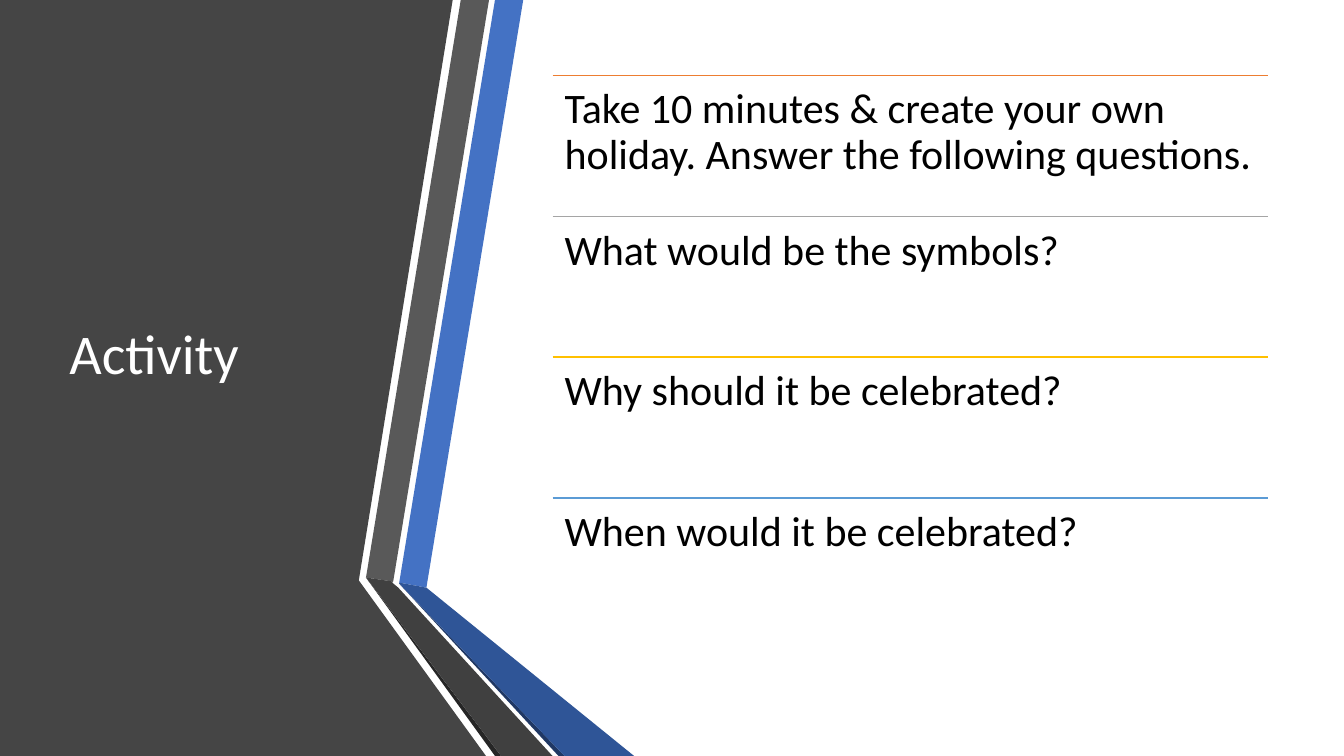
from dataclasses import dataclass

from lxml.etree import SubElement
from pptx import Presentation
from pptx.dml.color import RGBColor
from pptx.enum.text import MSO_ANCHOR, PP_ALIGN
from pptx.oxml.ns import qn
from pptx.slide import Slide
from pptx.util import Pt

PX = 9144  # EMU per px, 100 px to the inch


@dataclass(frozen=True)
class Theme:
    font: str = "Calibri"
    title_size: int = 40
    question_size: int = 30
    rule_width: int = 1
    title: str = "FFFFFF"
    question: str = "000000"
    panel: str = "454545"
    blue: str = "4472C4"
    blue_fold: str = "2F5597"
    blue_edge: str = "203864"
    gray: str = "595959"
    gray_fold: str = "404040"
    gray_edge: str = "262626"
    orange_rule: str = "ED7D31"
    gray_rule: str = "A5A5A5"
    gold_rule: str = "FFC000"
    sky_rule: str = "5B9BD5"


THEME = Theme()


@dataclass(frozen=True)
class Facet:
    color: str
    corners: tuple[tuple[int, int], ...]


@dataclass(frozen=True)
class Question:
    wording: str
    rule_color: str


@dataclass(frozen=True)
class Box:
    left: int
    top: int
    width: int
    height: int


# Dark panel and the folded ribbons beside it
FACETS = (
    Facet(THEME.panel, ((0, 0), (449, 0), (356, 575), (356, 576), (482, 750), (0, 750))),
    Facet(THEME.blue, ((396, 578), (423, 583), (519, 0), (491, 0))),
    Facet(THEME.gray, ((485, 0), (457, 0), (363, 573), (390, 577))),
    Facet(THEME.gray_edge, ((363, 573), (491, 750), (497, 750))),
    Facet(THEME.blue_edge, ((396, 579), (554, 750), (560, 750))),
    Facet(THEME.blue_fold, ((396, 579), (560, 750), (629, 750), (423, 583), (396, 578))),
    Facet(THEME.gray_fold, ((548, 750), (395, 583), (389, 578), (390, 577), (363, 573), (497, 750))),
)

QUESTIONS = (
    Question("Take 10 minutes & create your own holiday. Answer the following questions.",
             THEME.orange_rule),
    Question("What would be the symbols?", THEME.gray_rule),
    Question("Why should it be celebrated?", THEME.gold_rule),
    Question("When would it be celebrated?", THEME.sky_rule),
)

TITLE_BOX = Box(59, 75, 304, 558)
QUESTION_AREA = Box(548, 75, 710, 559)
TITLE_FRAME = {"word_wrap": True, "vertical_anchor": MSO_ANCHOR.MIDDLE}
QUESTION_FRAME = {
    "word_wrap": True, "vertical_anchor": MSO_ANCHOR.TOP,
    "margin_left": 12 * PX, "margin_right": 12 * PX,
    "margin_top": 12 * PX, "margin_bottom": 12 * PX,
}
PARAGRAPH = {"alignment": PP_ALIGN.LEFT, "line_spacing": 0.9}


def apply_format(target: object, values: dict[str, object]) -> None:
    for name, value in values.items():
        setattr(target, name, value)


def draw_facet(slide: Slide, facet: Facet) -> None:
    start, *others = facet.corners
    outline = slide.shapes.build_freeform(*start, scale=PX)
    outline.add_line_segments(others, close=True)
    surface = outline.convert_to_shape()
    surface.shadow.inherit = False
    surface.fill.solid()
    surface.fill.fore_color.rgb = RGBColor.from_string(facet.color)
    surface.line.fill.background()


def draw_wording(slide: Slide, box: Box, wording: str, size: int, color: str,
                 frame_format: dict[str, object]) -> None:
    frame = slide.shapes.add_textbox(
        box.left * PX, box.top * PX, box.width * PX, box.height * PX).text_frame
    apply_format(frame, frame_format)
    paragraph = frame.paragraphs[0]
    apply_format(paragraph, PARAGRAPH)
    run = paragraph.add_run()
    run.text = wording
    apply_format(run.font, {"name": THEME.font, "size": Pt(size)})
    run.font.color.rgb = RGBColor.from_string(color)


def draw_rule(slide: Slide, box: Box, color: str) -> None:
    rule = slide.shapes.add_connector(
        1, box.left * PX, box.top * PX, (box.left + box.width) * PX, box.top * PX)
    rule.line.color.rgb = RGBColor.from_string(color)
    rule.line.width = Pt(THEME.rule_width)
    SubElement(rule._element.spPr, qn("a:effectLst"))


def draw_question(slide: Slide, index: int, question: Question) -> None:
    area = QUESTION_AREA
    pitch = area.height / len(QUESTIONS)
    row = Box(area.left, round(area.top + index * pitch), area.width, round(pitch))
    draw_rule(slide, row, question.rule_color)
    draw_wording(slide, row, question.wording, THEME.question_size, THEME.question,
                 QUESTION_FRAME)


def main() -> None:
    deck = Presentation()
    apply_format(deck, {"slide_width": 1333 * PX, "slide_height": 750 * PX})
    slide = deck.slides.add_slide(deck.slide_layouts[6])

    # Panel and ribbons
    for facet in FACETS:
        draw_facet(slide, facet)

    # Title
    draw_wording(slide, TITLE_BOX, "Activity", THEME.title_size, THEME.title, TITLE_FRAME)

    # Questions
    for index, question in enumerate(QUESTIONS):
        draw_question(slide, index, question)

    deck.save("out.pptx")


if __name__ == "__main__":
    main()
